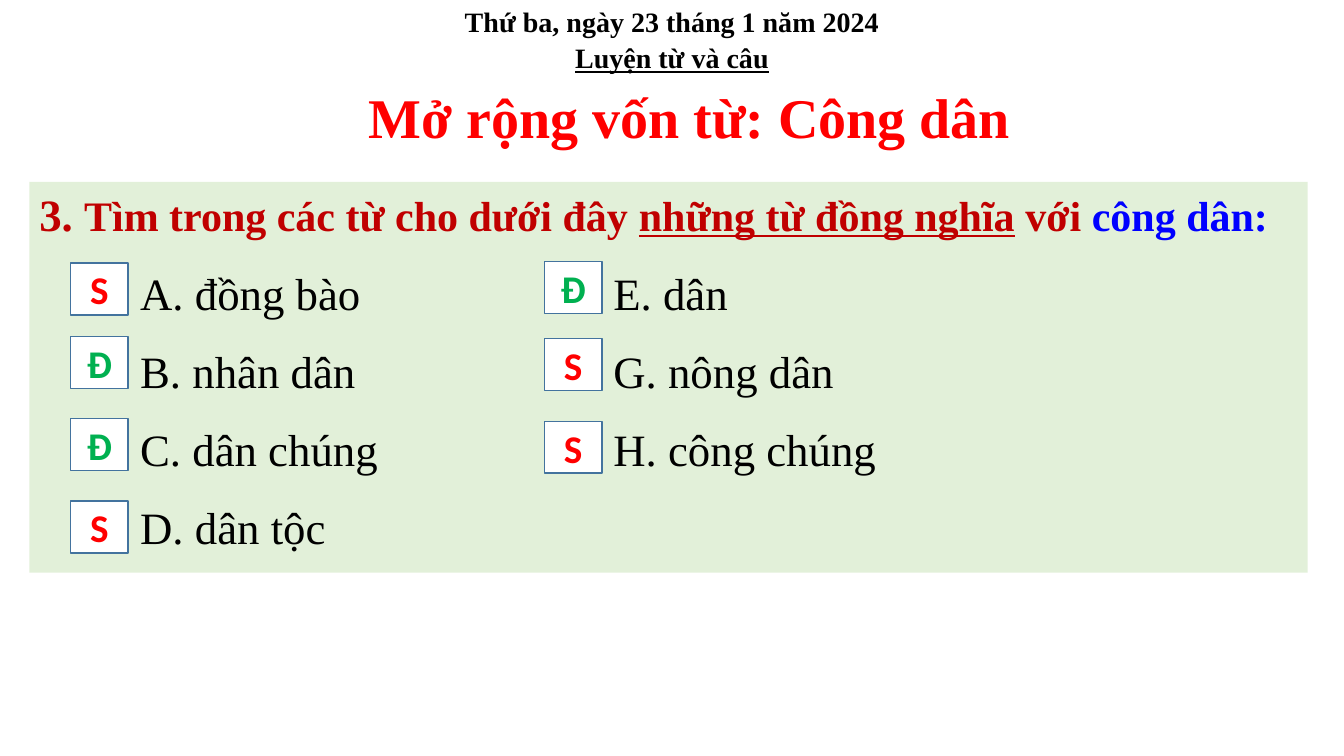
from lxml.etree import SubElement
from pptx import Presentation
from pptx.dml.color import RGBColor
from pptx.enum.shapes import MSO_SHAPE as Shape
from pptx.enum.text import MSO_ANCHOR as Anchor, PP_ALIGN as Align
from pptx.oxml.ns import qn
from pptx.util import Pt

BLACK = RGBColor(0x00, 0x00, 0x00)
WHITE = RGBColor(0xFF, 0xFF, 0xFF)
RED = RGBColor(0xFF, 0x00, 0x00)
DARK_RED = RGBColor(0xC0, 0x00, 0x00)
BLUE = RGBColor(0x00, 0x00, 0xFF)
GREEN = RGBColor(0x00, 0xB0, 0x50)
PALE_GREEN = RGBColor(0xE2, 0xF0, 0xD9)
BORDER = RGBColor(0x43, 0x73, 0x9E)
SERIF, SANS = "Times New Roman", "Calibri"

# Each row: left and right word of the exercise
WORDS = [
    ("A. đồng bào", "E. dân"),
    ("B. nhân dân", "G. nông dân"),
    ("C. dân chúng", "H. công chúng"),
    ("D. dân tộc",),
]
WORD_TABS = (72, 410)

# Each column of marks: offset from the panel's left, then (offset from its top, mark)
MARKS = [
    (29.5, [(58, "S"), (110.5, "Đ"), (169, "Đ"), (228, "S")]),
    (368, [(57, "Đ"), (112, "S"), (171, "S")]),
]
MARK_COLOURS = {"S": RED, "Đ": GREEN}


def add_run(paragraph, text, size, colour, bold=True, underline=False, font=SERIF):
    run = paragraph.add_run()
    run.text = text
    run.font.name = font
    run.font.size = Pt(size)
    run.font.bold = bold
    run.font.underline = underline
    run.font.color.rgb = colour


def add_rectangle(slide, left, top, width, height, fill):
    rectangle = slide.shapes.add_shape(
        Shape.RECTANGLE, Pt(left), Pt(top), Pt(width), Pt(height))
    rectangle.shadow.inherit = False
    rectangle.fill.solid()
    rectangle.fill.fore_color.rgb = fill
    rectangle.text_frame.word_wrap = True
    return rectangle


def add_heading(slide, left, top, width):
    # Date and subject
    lines = [("Thứ ba, ngày 23 tháng 1 năm 2024", False), ("Luyện từ và câu", True)]
    for row, (text, underline) in enumerate(lines):
        line = slide.shapes.add_textbox(
            Pt(left), Pt(top + row * 25.5), Pt(width), Pt(31.5))
        line.text_frame.word_wrap = True
        paragraph = line.text_frame.paragraphs[0]
        paragraph.alignment = Align.CENTER
        add_run(paragraph, text, 20, BLACK, underline=underline)

    # Lesson title
    title = slide.shapes.title
    title.left, title.top = Pt(left + 75), Pt(top + 55.5)
    title.width, title.height = Pt(595), Pt(55.5)
    title.text_frame.vertical_anchor = Anchor.TOP
    paragraph = title.text_frame.paragraphs[0]
    paragraph.alignment = Align.CENTER
    add_run(paragraph, "Mở rộng vốn từ: Công dân", 40, RED)


def add_exercise(slide, left, top, width, height):
    panel = add_rectangle(slide, left, top, width, height, PALE_GREEN)
    panel.line.fill.background()
    frame = panel.text_frame
    frame.vertical_anchor = Anchor.TOP

    # Question
    question = frame.paragraphs[0]
    question.alignment = Align.LEFT
    question.space_before = Pt(6)
    add_run(question, "3. ", 32, DARK_RED)
    add_run(question, "Tìm trong các từ cho dưới đây ", 30, DARK_RED)
    add_run(question, "những từ đồng nghĩa", 30, DARK_RED, underline=True)
    add_run(question, " với ", 30, DARK_RED)
    add_run(question, "công dân:", 30, BLUE)

    # Words in two tabbed columns
    for words in WORDS:
        paragraph = frame.add_paragraph()
        paragraph.alignment = Align.LEFT
        paragraph.space_before = Pt(17.5)
        tab_list = SubElement(paragraph._p.get_or_add_pPr(), qn("a:tabLst"))
        for position in WORD_TABS:
            SubElement(tab_list, qn("a:tab"), pos=str(Pt(position)), algn="l")
        add_run(paragraph, "".join("\t" + word for word in words), 32, BLACK, bold=False)

    # Right (Đ) and wrong (S) marks
    for column_left, marks in MARKS:
        for mark_top, mark in marks:
            add_mark(slide, left + column_left, top + mark_top, mark)


def add_mark(slide, left, top, mark):
    box = add_rectangle(slide, left, top, 41, 37, WHITE)
    box.line.color.rgb = BORDER
    box.line.width = Pt(1)
    box.text_frame.vertical_anchor = Anchor.MIDDLE
    paragraph = box.text_frame.paragraphs[0]
    paragraph.alignment = Align.CENTER
    add_run(paragraph, mark, 28, MARK_COLOURS[mark], font=SANS)


def main():
    deck = Presentation()
    deck.slide_width, deck.slide_height = Pt(960), Pt(540)
    slide = deck.slides.add_slide(deck.slide_layouts[5])
    add_heading(slide, 120, 0, 720)
    add_exercise(slide, 21, 130, 913, 279)
    deck.save("out.pptx")


if __name__ == "__main__":
    main()
